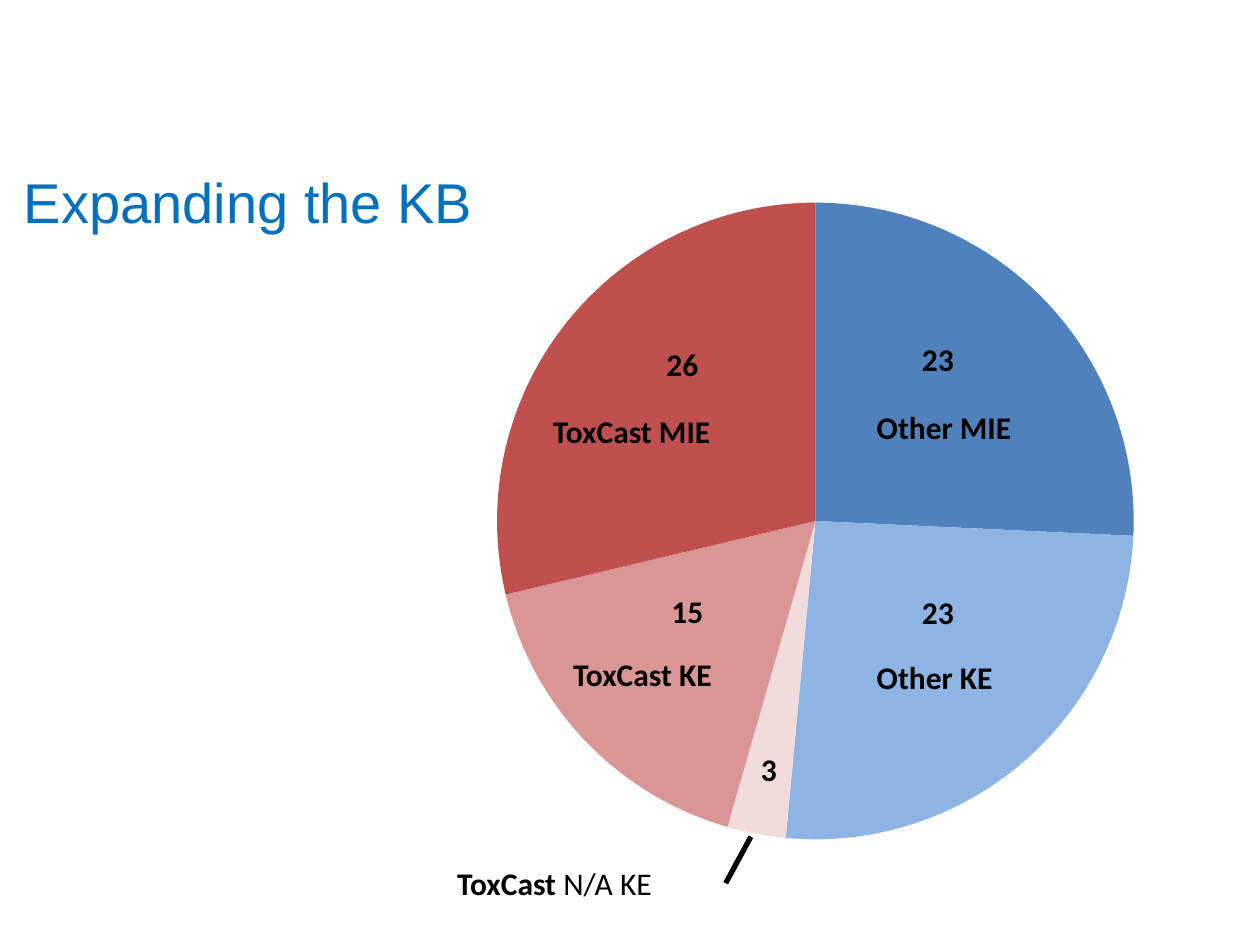
from pptx import Presentation
from pptx.chart.data import CategoryChartData
from pptx.dml.color import RGBColor
from pptx.enum.chart import XL_CHART_TYPE as ChartType
from pptx.enum.shapes import MSO_CONNECTOR as Connector
from pptx.enum.text import MSO_ANCHOR as Anchor, MSO_AUTO_SIZE as AutoSize, PP_ALIGN as Align
from pptx.oxml import parse_xml
from pptx.oxml.ns import nsdecls
from pptx.util import Pt

TITLE = "Expanding the KB"
SLICES = [
    ("1", 26, "4F81BD"),
    ("2", 26, "8EB4E3"),
    ("3", 3, "F2DCDB"),
    ("4", 17, "D99694"),
    ("5", 29, "C0504D"),
]
PIE_AREA = {"x": 0.17, "y": 0.18, "w": 0.62, "h": 0.82}
NAME_WIDTH, COUNT_WIDTH, LABEL_HEIGHT = 140, 50, 29
LABELS = [
    ([("ToxCast", True), (" N/A KE", False)], 254.2, 490.3, 208),
    ([("ToxCast MIE", True)], 308.9, 231.8, NAME_WIDTH),
    ([("ToxCast KE", True)], 320.4, 370.8, NAME_WIDTH),
    ([("Other KE", True)], 493.9, 372.2, NAME_WIDTH),
    ([("Other MIE", True)], 493.9, 229.7, NAME_WIDTH),
    ([("23", True)], 519.8, 190.8, COUNT_WIDTH),
    ([("23", True)], 519.8, 335.5, COUNT_WIDTH),
    ([("26", True)], 373.7, 193.7, COUNT_WIDTH),
    ([("15", True)], 376.6, 334.8, COUNT_WIDTH),
    ([("3", True)], 427.7, 424.8, COUNT_WIDTH),
]


def color(hex_code):
    return RGBColor.from_string(hex_code)


def set_font(font, name, size, hex_code):
    font.name, font.size = name, Pt(size)
    font.color.rgb = color(hex_code)


def add_title(slide):
    title = slide.shapes.title
    title.left, title.top, title.width, title.height = Pt(6.5), Pt(90.7), Pt(279.4), Pt(48.2)
    frame = title.text_frame
    frame.text = TITLE
    frame.vertical_anchor = Anchor.MIDDLE
    frame.auto_size = AutoSize.NONE
    frame.paragraphs[0].alignment = Align.LEFT
    set_font(frame.paragraphs[0].font, "Arial", 32, "0070C0")


def add_pie(slide):
    data = CategoryChartData()
    data.categories = [category for category, _, _ in SLICES]
    data.add_series("Series 1", [value for _, value, _ in SLICES])
    chart = slide.shapes.add_chart(
        ChartType.PIE, Pt(184.3), Pt(0), Pt(586.8), Pt(504.7), data).chart
    chart.has_legend = chart.has_title = False
    set_font(chart.font, "Calibri", 10, "000000")
    plot = chart.plots[0]
    plot.vary_by_categories = True
    for index, (_, _, fill_color) in enumerate(SLICES):
        fill = plot.series[0].points[index].format.fill
        fill.solid()
        fill.fore_color.rgb = color(fill_color)
    modes = "".join(f'<c:{axis}Mode val="edge"/>' for axis in "xy")
    sizes = "".join(f'<c:{key} val="{value}"/>' for key, value in PIE_AREA.items())
    layout = parse_xml(
        f'<c:layout {nsdecls("c")}><c:manualLayout><c:layoutTarget val="inner"/>'
        f'{modes}{sizes}</c:manualLayout></c:layout>')
    plot_area = chart._chartSpace.chart.plotArea
    for automatic in plot_area.xpath("c:layout"):
        plot_area.remove(automatic)
    plot_area.insert(0, layout)


def add_label(slide, runs, left, top, width):
    frame = slide.shapes.add_textbox(Pt(left), Pt(top), Pt(width), Pt(LABEL_HEIGHT)).text_frame
    frame.word_wrap = True
    frame.auto_size = AutoSize.SHAPE_TO_FIT_TEXT
    paragraph = frame.paragraphs[0]
    for text, bold in runs:
        run = paragraph.add_run()
        run.text = text
        run.font.bold = bold
    set_font(paragraph.font, "Calibri", 18, "000000")


def add_leader(slide):
    leader = slide.shapes.add_connector(
        Connector.STRAIGHT, Pt(414.7), Pt(504.7), Pt(429.1), Pt(478.1))
    leader.line.width = Pt(3)
    leader.line.color.rgb = color("000000")
    leader._element.spPr.append(parse_xml(f'<a:effectLst {nsdecls("a")}/>'))


def main():
    deck = Presentation()
    deck.slide_width, deck.slide_height = Pt(720), Pt(540)
    slide = deck.slides.add_slide(deck.slide_layouts[5])
    add_title(slide)
    add_pie(slide)
    for label in LABELS:
        add_label(slide, *label)
    add_leader(slide)
    deck.save("out.pptx")


if __name__ == "__main__":
    main()
